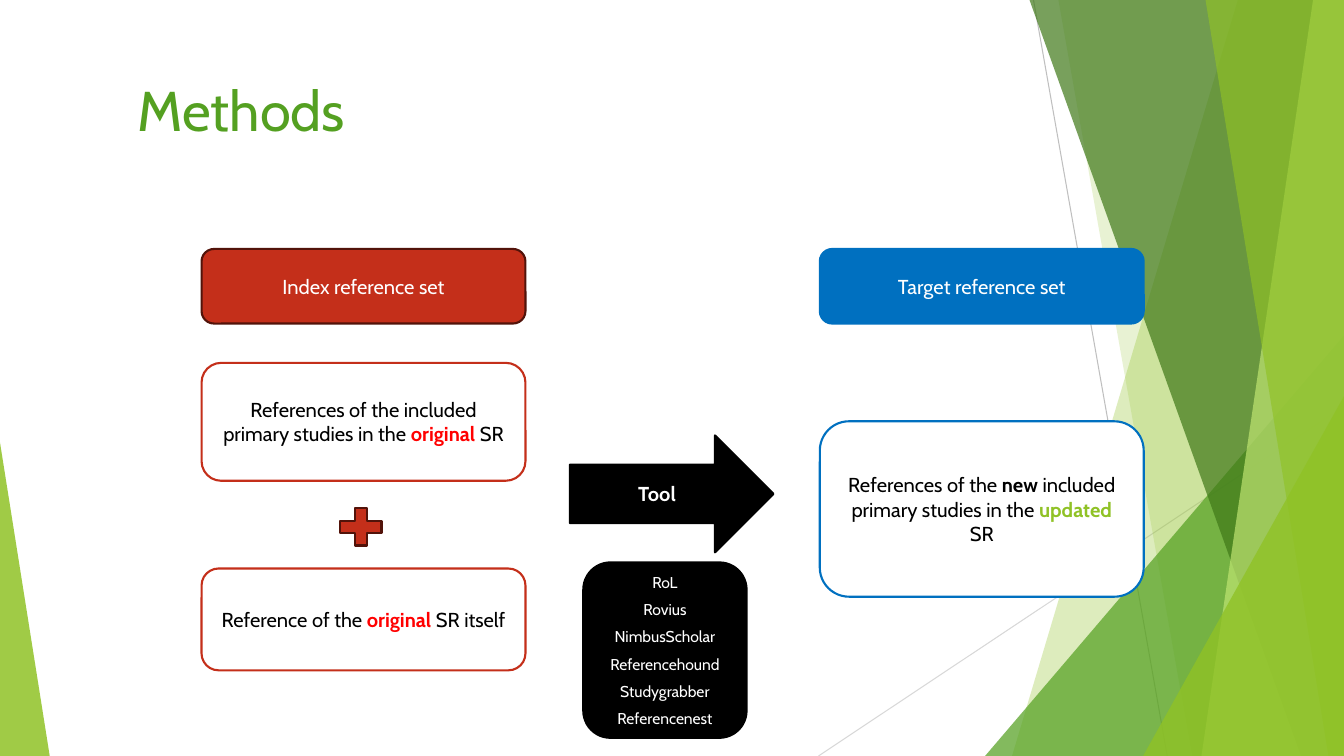
"""Builds the Methods slide: an index set, a tool and a target set over green facets."""
from lxml import etree
from pptx import Presentation
from pptx.dml.color import RGBColor
from pptx.enum.shapes import MSO_CONNECTOR, MSO_SHAPE
from pptx.enum.text import MSO_ANCHOR, PP_ALIGN
from pptx.oxml.ns import qn
from pptx.util import Inches, Pt

ROUND = MSO_SHAPE.ROUNDED_RECTANGLE
ARROW = MSO_SHAPE.RIGHT_ARROW
PLUS = MSO_SHAPE.MATH_PLUS
WEDGE = MSO_SHAPE.ISOSCELES_TRIANGLE
STRAIGHT = MSO_CONNECTOR.STRAIGHT
LEFT, CENTER = PP_ALIGN.LEFT, PP_ALIGN.CENTER
TOP, MIDDLE = MSO_ANCHOR.TOP, MSO_ANCHOR.MIDDLE

WHITE = RGBColor(0xFF, 0xFF, 0xFF)
BLACK = RGBColor(0x00, 0x00, 0x00)
BRICK = RGBColor(0xC4, 0x2F, 0x1A)
DARK = RGBColor(0x52, 0x13, 0x0A)
RED = RGBColor(0xFF, 0x00, 0x00)
BLUE = RGBColor(0x00, 0x70, 0xC0)
LIME = RGBColor(0x90, 0xC2, 0x26)
GREEN = RGBColor(0x54, 0xA0, 0x21)
MOSS = RGBColor(0x3F, 0x78, 0x18)
PALE = RGBColor(0xBF, 0xE4, 0x71)
GRAY = RGBColor(0xBF, 0xBF, 0xBF)
SILVER = RGBColor(0xD8, 0xD8, 0xD8)

deck = Presentation()
deck.slide_width, deck.slide_height = Inches(40 / 3), Inches(7.5)
COLS, ROWS = 100, 75
COL, ROW = deck.slide_width / COLS, deck.slide_height / ROWS
slide = deck.slides.add_slide(deck.slide_layouts[6])
shapes = slide.shapes


def paint(shape, fill, edge=None, alpha=100):
    """Set fill, outline and opacity, without a shadow."""
    shape.shadow.inherit = False
    shape.fill.solid()
    shape.fill.fore_color.rgb = fill
    if alpha < 100:
        tint = shape.fill._xPr.find(qn("a:solidFill"))[0]
        etree.SubElement(tint, qn("a:alpha"), val=str(alpha * 1000))
    if edge is None:
        shape.line.fill.background()
    else:
        shape.line.color.rgb = edge
        shape.line.width = Pt(1.5)


def write(shape, text, size=14.4, ink=BLACK, bold=False, hues=(), align=CENTER,
          anchor=MIDDLE, gap=0):
    """Fill a shape with text; parts between bars are bold in the given hues."""
    frame = shape.text_frame
    frame.word_wrap = True
    frame.vertical_anchor = anchor
    for row, line in enumerate(text.split("\n")):
        para = frame.add_paragraph() if row else frame.paragraphs[0]
        para.alignment = align
        para.space_before = Pt(gap if row else 0)
        for part, words in enumerate(line.split("|")):
            run = para.add_run()
            run.text = words
            font = run.font
            font.name, font.size = "Cabin", Pt(size)
            font.bold = bold or part % 2 == 1
            font.color.rgb = hues[part // 2] if part % 2 else ink


for x1, y1, x2, y2, hue in (
    (76.9, 0, 86.85, ROWS, GRAY),
    (COLS, 40.3, 60.9, ROWS, SILVER),
):
    ray = shapes.add_connector(STRAIGHT, round(x1 * COL), round(y1 * ROW),
                               round(x2 * COL), round(y2 * ROW))
    ray.line.color.rgb = hue
    ray.line.width = Pt(0.75)
    etree.SubElement(ray._element.spPr, qn("a:effectLst"))

FACETS = (
    ("band", 92.1, 75.3, LIME, 30),
    ("band", 78.75, 88.7, LIME, 20),
    ("wedge", 73.3, 33.3, GREEN, 72),
    ("band", 76.6, 96.8, MOSS, 70),
    ("band", 97.7, 89.4, PALE, 70),
    ("band", 89.7, 98.85, LIME, 65),
    ("wedge", 85.05, 39.3, LIME, 80),
)
for kind, first, second, hue, alpha in FACETS:
    if kind == "band":
        pen = shapes.build_freeform(round(first * COL), 0)
        pen.add_line_segments([
            (round(x * COL), round(y * ROW))
            for x, y in ((COLS, 0), (COLS, ROWS), (second, ROWS))
        ])
        facet = pen.convert_to_shape()
    else:
        facet = shapes.add_shape(WEDGE, round(first * COL), round(second * ROW),
                                 round((COLS - first) * COL), round((ROWS - second) * ROW))
        facet.adjustments[0] = 1
    paint(facet, hue, alpha=alpha)

corner = shapes.add_shape(WEDGE, 0, round(43.9 * ROW), round(3.7 * COL), round(31.1 * ROW))
corner.adjustments[0] = 0
paint(corner, LIME, alpha=85)

title = shapes.add_textbox(round(9.5 * COL), round(7 * ROW), round(81 * COL), round(9.8 * ROW))
write(title, "Methods", size=40, ink=GREEN, align=LEFT, anchor=TOP)

INDEX, TARGET, WIDE = 15, 61, 24.1
TOOLS = "RoL\nRovius\nNimbusScholar\nReferencehound\nStudygrabber\nReferencenest"
BLOCKS = (
    (ROUND, INDEX, 24.7, WIDE, 7.4, BRICK, DARK, "Index reference set", {"ink": WHITE}),
    (ROUND, TARGET, 24.7, WIDE, 7.4, BLUE, BLUE, "Target reference set", {"ink": WHITE}),
    (ROUND, INDEX, 36, WIDE, 11.7, WHITE, BRICK,
     "References of the included primary studies in the |original| SR", {"hues": (RED,)}),
    (PLUS, 24.75, 49.7, 4.2, 5.1, BRICK, DARK, "", {}),
    (ROUND, INDEX, 56.4, WIDE, 10.1, WHITE, BRICK,
     "Reference of the |original| SR itself", {"hues": (RED,)}),
    (ROUND, TARGET, 41.8, WIDE, 17.4, WHITE, BLUE,
     "References of the |new| included primary studies in the |updated| SR",
     {"hues": (BLACK, LIME)}),
    (ARROW, 42.4, 43.2, 15.15, 11.6, BLACK, BLACK, "Tool", {"ink": WHITE, "bold": True}),
    (ROUND, 43.4, 55.8, 12.15, 17.4, BLACK, BLACK, TOOLS,
     {"ink": WHITE, "size": 11.2, "gap": 6}),
)
for kind, x, y, wide, high, fill, edge, text, style in BLOCKS:
    block = shapes.add_shape(kind, round(x * COL), round(y * ROW),
                             round(wide * COL), round(high * ROW))
    paint(block, fill, edge)
    if text:
        write(block, text, **style)

deck.save("out.pptx")
